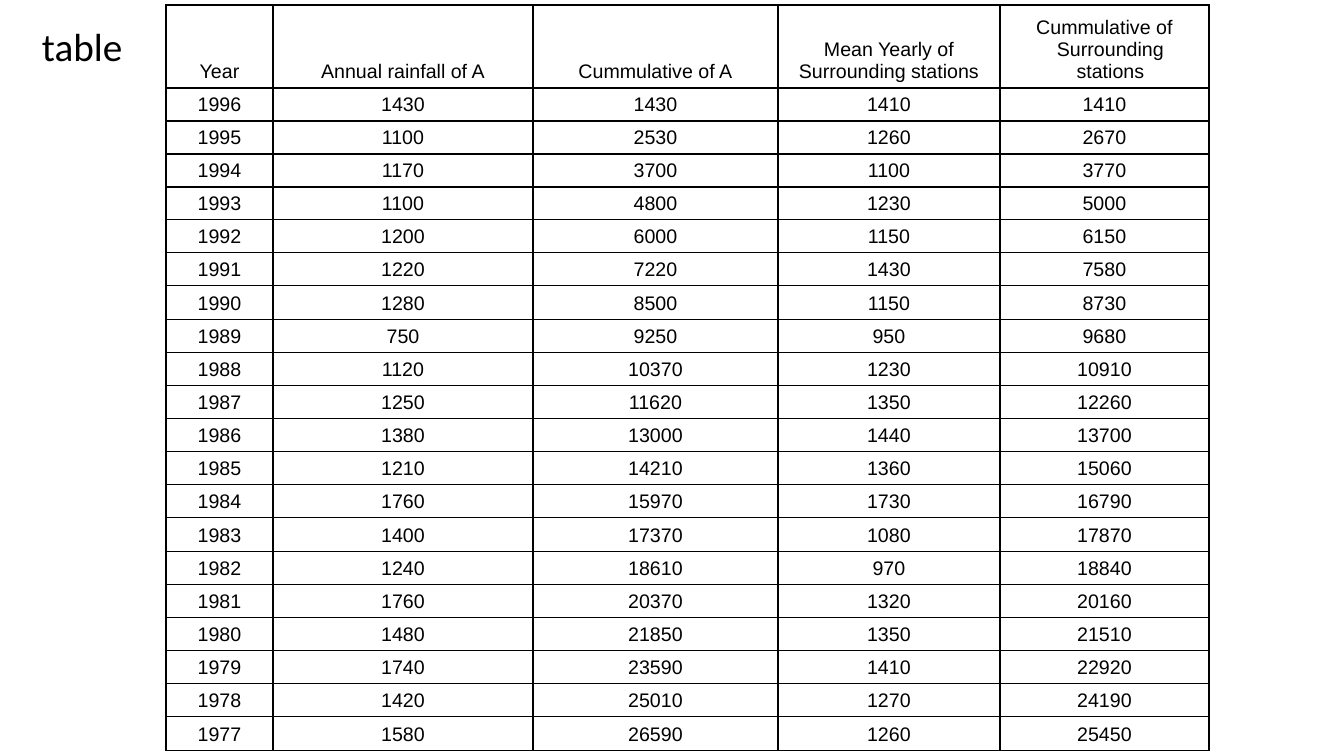
"""Build the slide with the yearly and cumulative rainfall table."""
from itertools import accumulate

from lxml.etree import SubElement
from pptx import Presentation
from pptx.dml.color import RGBColor
from pptx.enum.text import MSO_ANCHOR, PP_ALIGN
from pptx.oxml.ns import qn
from pptx.util import Pt

PX = 914400 / 100.8
COLORS = {"ink": "000000", "paper": "FFFFFF"}


def px(length):
    return round(length * PX)


def style_text(paragraph, font_name, size):
    for run in paragraph.runs:
        run.font.name = font_name
        run.font.size = Pt(size)
        run.font.color.rgb = RGBColor.from_string(COLORS["ink"])


prs = Presentation()
prs.slide_width, prs.slide_height = px(1344), px(756)
slide = prs.slides.add_slide(prs.slide_layouts[6])

heading = slide.shapes.add_textbox(px(32), px(23), px(1219), px(728)).text_frame
heading.word_wrap = True
heading.text = "table"
heading.paragraphs[0].line_spacing = 0.9
heading.paragraphs[0].space_before = Pt(10)
style_text(heading.paragraphs[0], "Calibri", 28)

headers = ["Year", "Annual rainfall of A", "Cummulative of A",
           "Mean Yearly of Surrounding stations", "Cummulative of Surrounding stations"]
header_indents = [38, 38, 38, 0, 12]
years = range(1996, 1976, -1)
station_a = [1430, 1100, 1170, 1100, 1200, 1220, 1280, 750, 1120, 1250,
             1380, 1210, 1760, 1400, 1240, 1760, 1480, 1740, 1420, 1580]
surrounding = [1410, 1260, 1100, 1230, 1150, 1430, 1150, 950, 1230, 1350,
               1440, 1360, 1730, 1080, 970, 1320, 1350, 1410, 1270, 1260]
records = [headers, *zip(years, station_a, accumulate(station_a),
                         surrounding, accumulate(surrounding))]

column_widths = [107, 260, 245, 222, 209]
header_height, years_height = 83, 663
year_edges = [years_height * i // len(years) for i in range(len(years) + 1)]
row_heights = [header_height] + [b - a for a, b in zip(year_edges, year_edges[1:])]

rainfall = slide.shapes.add_table(
    len(records), len(headers), px(166), px(5),
    px(sum(column_widths)), px(sum(row_heights))).table
rainfall.first_row = False
rainfall.horz_banding = False
for column, width in zip(rainfall.columns, column_widths):
    column.width = px(width)

for row, height, record in zip(rainfall.rows, row_heights, records):
    row.height = px(height)
    indents = header_indents if record is headers else [38] * len(headers)
    for cell, value, indent in zip(row.cells, record, indents):
        cell.text_frame.text = str(value)
        cell.vertical_anchor = MSO_ANCHOR.BOTTOM
        cell.margin_top = px(2)
        cell.margin_bottom = px(5)
        paragraph = cell.text_frame.paragraphs[0]
        paragraph.alignment = PP_ALIGN.CENTER
        style_text(paragraph, "Arial", 14)
        paragraph_props = paragraph._p.get_or_add_pPr()
        paragraph_props.set("marL", str(px(indent)))
        paragraph_props.set("indent", str(-px(indent)))
        cell_props = cell._tc.get_or_add_tcPr()
        for side in ("a:lnL", "a:lnR", "a:lnT", "a:lnB"):
            border = SubElement(cell_props, qn(side), w=str(Pt(1)))
            border_fill = SubElement(border, qn("a:solidFill"))
            SubElement(border_fill, qn("a:srgbClr"), val=COLORS["ink"])
        cell.fill.solid()
        cell.fill.fore_color.rgb = RGBColor.from_string(COLORS["paper"])

prs.save("out.pptx")
